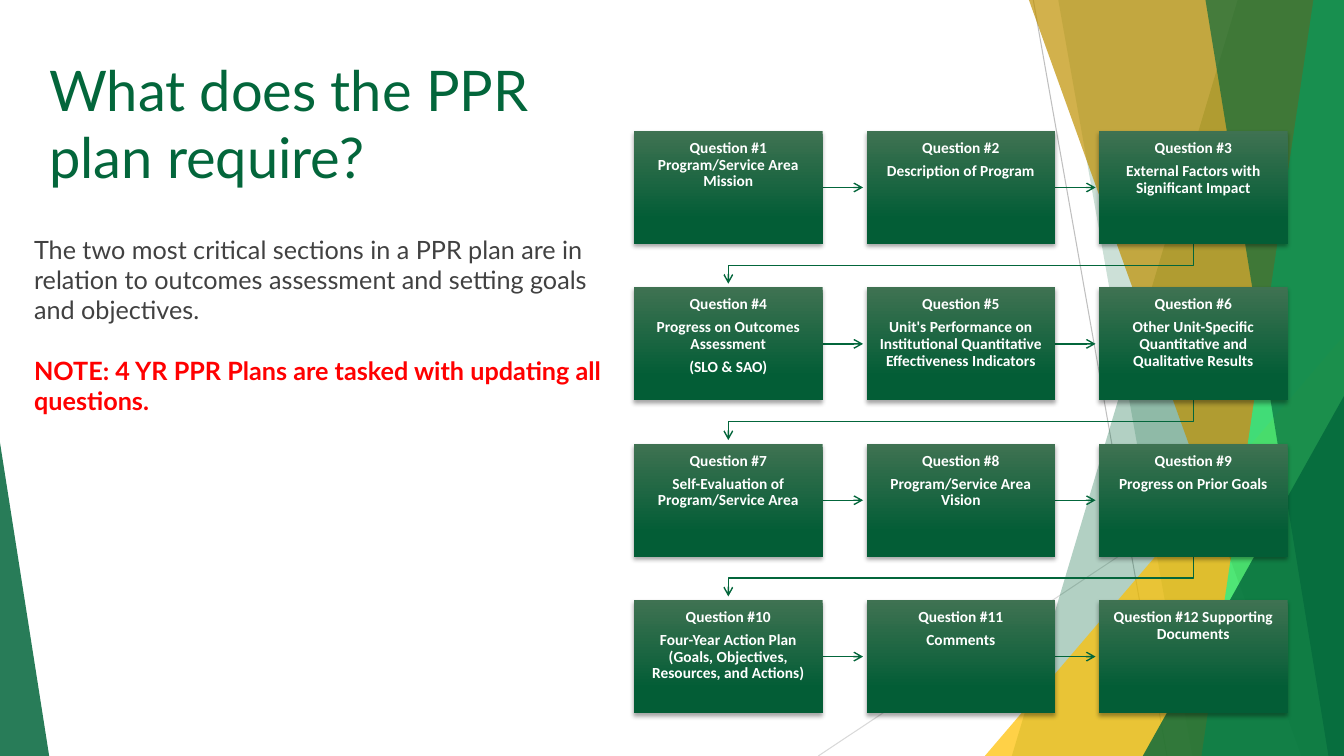
"""Build the slide on what a PPR plan requires."""
from lxml import etree
from pptx import Presentation, util as u
from pptx.dml.color import RGBColor
from pptx.enum import shapes, text
from pptx.oxml import ns

GREEN = RGBColor(0x03, 0x66, 0x3B)
MOSS = RGBColor(0x3F, 0x72, 0x52)
PINE = RGBColor(0x03, 0x5D, 0x36)
MINT = RGBColor(0x13, 0xF8, 0x95)
GOLD = RGBColor(0xFF, 0xC0, 0x00)
OCHRE = RGBColor(0xBF, 0x90, 0x00)
GREY = RGBColor(0x41, 0x41, 0x41)
SILVER = RGBColor(0xBF, 0xBF, 0xBF)
PALE = RGBColor(0xD9, 0xD9, 0xD9)
RED = RGBColor(0xFF, 0, 0)
BLACK = RGBColor(0, 0, 0)
WHITE = RGBColor(0xFF, 0xFF, 0xFF)

TITLE = "What does the PPR plan require?"
BODY = ("The two most critical sections in a PPR plan are in relation to "
        "outcomes assessment and setting goals and objectives.")
NOTE = "NOTE: 4 YR PPR Plans are tasked with updating all questions."
STEPS = [
    ["Question #1 Program/Service Area Mission"],
    ["Question #2", "Description of Program"],
    ["Question #3", "External Factors with Significant Impact"],
    ["Question #4", "Progress on Outcomes Assessment", "(SLO & SAO)"],
    ["Question #5", "Unit's Performance on Institutional Quantitative "
     "Effectiveness Indicators"],
    ["Question #6", "Other Unit-Specific Quantitative and Qualitative Results"],
    ["Question #7", "Self-Evaluation of Program/Service Area"],
    ["Question #8", "Program/Service Area Vision"],
    ["Question #9", "Progress on Prior Goals"],
    ["Question #10", "Four-Year Action Plan (Goals, Objectives, Resources, "
     "and Actions)"],
    ["Question #11", "Comments"],
    ["Question #12 Supporting Documents"],
]

WIDE, HIGH = 33.87, 19.05
RAYS = [((26.04, 0), (29.41, HIGH), SILVER), ((WIDE, 10.24), (20.62, HIGH), PALE)]
BANDS = [
    ("band", (31.19, 25.5), GREEN, 30),
    ("band", (26.67, 30.05), GREEN, 20),
    ("wedge", (24.82, 8.46, 9.05, 10.59, 1), GOLD, 72),
    ("band", (25.93, 32.79), OCHRE, 70),
    ("band", (33.1, 30.28), MINT, 70),
    ("band", (30.38, 33.48), GREEN, 65),
    ("wedge", (28.8, 9.98, 5.07, 9.07, 1), GREEN, 80),
    ("wedge", (0, 11.15, 1.24, 7.9, 0), GREEN, 85),
]
COLS, LEFT, TOP = 3, 15.98, 3.3
STEP_X, STEP_Y, BOX_W, BOX_H = 5.86, 3.94, 4.75, 2.85
REACH, DROP, FALL = 1.02, 0.54, 1.0

deck = Presentation()
deck.slide_width, deck.slide_height = u.Cm(WIDE), u.Cm(HIGH)
slide = deck.slides.add_slide(deck.slide_layouts[6])
parts = slide.shapes


def add(parent, tag, **attrs):
    node = etree.SubElement(parent, ns.qn(tag))
    for key, val in attrs.items():
        node.set(key, str(val))
    return node


def cms(*vals):
    return [u.Cm(val) for val in vals]


def trace(points, close):
    spots = [cms(*point) for point in points]
    pen = parts.build_freeform(*spots[0])
    pen.add_line_segments(spots[1:], close=close)
    shape = pen.convert_to_shape()
    shape.shadow.inherit = False
    return shape


def tint(shape, color, alpha):
    shape.fill.solid()
    shape.fill.fore_color.rgb = color
    shape.line.fill.background()
    tone = shape.fill._xPr.find(".//" + ns.qn("a:srgbClr"))
    add(tone, "a:alpha", val=alpha * 1000)


def stroke(shape, color, width, head=False):
    shape.line.color.rgb = color
    shape.line.width = u.Pt(width)
    if head:
        add(shape.line._get_or_add_ln(), "a:tailEnd", type="arrow")


def link(start, end, color, width, head=False):
    wire = parts.add_connector(shapes.MSO_CONNECTOR.STRAIGHT, *cms(*start, *end))
    stroke(wire, color, width, head)
    add(wire._element.spPr, "a:effectLst")


def write(frame, lines, size=18, font="Lato", color=GREY, bold=False,
          align=text.PP_ALIGN.LEFT, space=1.0, after=0, before=0, pad=None):
    frame.word_wrap = True
    frame.vertical_anchor = text.MSO_ANCHOR.TOP
    if pad is not None:
        frame.margin_left = frame.margin_right = u.Cm(pad)
        frame.margin_top = frame.margin_bottom = u.Cm(pad)
    for line in lines:
        para = frame.paragraphs[0]
        if para.runs:
            para = frame.add_paragraph()
        para.alignment, para.line_spacing = align, space
        para.space_before, para.space_after = u.Pt(before), u.Pt(after)
        run = para.add_run()
        run.text = line
        run.font.size, run.font.name, run.font.bold = u.Pt(size), font, bold
        run.font.color.rgb = color


def panel(x, y, lines):
    box = parts.add_shape(shapes.MSO_SHAPE.RECTANGLE, *cms(x, y, BOX_W, BOX_H))
    box.shadow.inherit = False
    box.fill.gradient()
    box.fill.gradient_angle = 270
    for stop, color, spot in zip(box.fill.gradient_stops, (MOSS, PINE), (0, 0.78)):
        stop.color.rgb, stop.position = color, spot
    box.line.fill.background()
    glow = add(box._element.spPr.find(ns.qn("a:effectLst")), "a:outerShdw",
               blurRad=u.Pt(3), dist=u.Pt(2), dir=90 * 60000, rotWithShape=0)
    add(add(glow, "a:srgbClr", val=BLACK), "a:alpha", val=35000)
    write(box.text_frame, lines, size=11, font="Calibri", color=WHITE, bold=True,
          align=text.PP_ALIGN.CENTER, space=0.9, after=4.6, pad=0.23)


for start, end, color in RAYS:
    link(start, end, color, 0.75)

for kind, place, color, alpha in BANDS:
    if kind == "band":
        high, low = place
        shape = trace([(high, 0), (WIDE, 0), (WIDE, HIGH), (low, HIGH)], True)
    else:
        shape = parts.add_shape(shapes.MSO_SHAPE.ISOSCELES_TRIANGLE, *cms(*place[:4]))
        shape.adjustments[0] = place[4]
        shape.shadow.inherit = False
    tint(shape, color, alpha)

title = parts.add_textbox(*cms(0.99, 1.27, 15.19, 5.18))
write(title.text_frame, [TITLE], size=40, color=GREEN)

for rank, lines in enumerate(STEPS):
    row, col = divmod(rank, COLS)
    x, y = LEFT + col * STEP_X, TOP + row * STEP_Y
    if col < COLS - 1:
        edge, mid = x + BOX_W, y + BOX_H / 2
        link((edge, mid), (edge + REACH, mid), GREEN, 1, True)
    elif rank < len(STEPS) - 1:
        base, here, back = y + BOX_H, x + BOX_W / 2, LEFT + BOX_W / 2
        bend = trace([(here, base), (here, base + DROP), (back, base + DROP),
                      (back, base + FALL)], False)
        bend.fill.background()
        stroke(bend, GREEN, 1, True)
    panel(x, y, lines)

body = parts.add_textbox(*cms(0.61, 5.77, 15.06, 8.38))
write(body.text_frame, [BODY])
write(body.text_frame, [NOTE], color=RED, bold=True, before=21.6)

deck.save("out.pptx")
